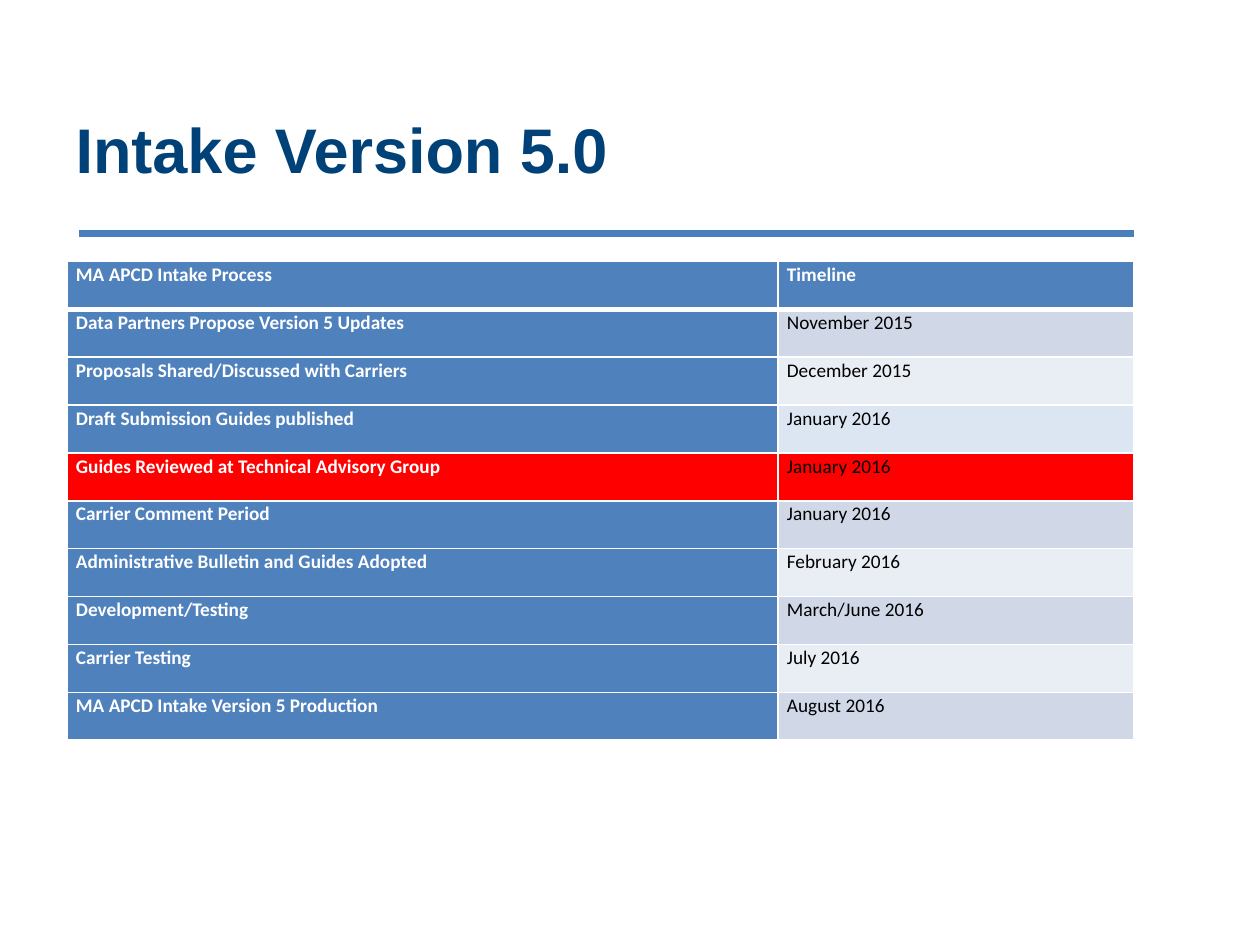
from lxml.etree import SubElement
from pptx import Presentation
from pptx.dml.color import RGBColor
from pptx.enum.shapes import MSO_CONNECTOR
from pptx.enum.text import MSO_ANCHOR, PP_ALIGN
from pptx.oxml.ns import qn
from pptx.util import Cm, Pt

BLUE, RED, WHITE, BLACK = "4F81BD", "FF0000", "FFFFFF", "000000"
BAND_DARK, BAND_LIGHT, BAND_PALE = "D0D8E8", "E9EDF4", "DCE6F2"

# Process step, timeline, fill of each column
ROWS = [
    ("MA APCD Intake Process", "Timeline", BLUE, BLUE),
    ("Data Partners Propose Version 5 Updates", "November 2015", BLUE, BAND_DARK),
    ("Proposals Shared/Discussed with Carriers", "December 2015", BLUE, BAND_LIGHT),
    ("Draft Submission Guides published", "January 2016", BLUE, BAND_PALE),
    ("Guides Reviewed at Technical Advisory Group", "January 2016", RED, RED),
    ("Carrier Comment Period", "January 2016", BLUE, BAND_DARK),
    ("Administrative Bulletin and Guides Adopted", "February 2016", BLUE, BAND_LIGHT),
    ("Development/Testing", "March/June 2016", BLUE, BAND_DARK),
    ("Carrier Testing", "July 2016", BLUE, BAND_LIGHT),
    ("MA APCD Intake Version 5 Production", "August 2016", BLUE, BAND_DARK),
]


def rgb(value):
    return RGBColor.from_string(value)


def apply(obj, values):
    for name, value in values.items():
        setattr(obj, name, value)


def format_font(font, color, **values):
    apply(font, values)
    font.color.rgb = rgb(color)


def add_title(s, text, left, top, width, height):
    title = s.shapes.title
    apply(title, dict(left=Cm(left), top=Cm(top), width=Cm(width), height=Cm(height)))
    tf = title.text_frame
    apply(tf, dict(text=text, vertical_anchor=MSO_ANCHOR.MIDDLE, word_wrap=True))
    p = tf.paragraphs[0]
    p.alignment = PP_ALIGN.LEFT
    format_font(p.runs[0].font, "004178", name="Arial", size=Pt(36), bold=True)


def add_rule(s, left, top, width):
    line = s.shapes.add_connector(
        MSO_CONNECTOR.STRAIGHT, Cm(left), Cm(top), Cm(left + width), Cm(top))
    line.line.width = Pt(4)
    line.line.color.rgb = rgb("4B7EBC")
    SubElement(line._element.spPr, qn("a:effectLst"))


def set_borders(cell, top, bottom):
    """Draw white borders; must run before the cell gets its fill."""
    tc_pr = cell._tc.get_or_add_tcPr()
    for side, width in dict(L=1, R=1, T=top, B=bottom).items():
        ln = SubElement(tc_pr, qn(f"a:ln{side}"), w=str(Pt(width)))
        fill = SubElement(ln, qn("a:solidFill"))
        SubElement(fill, qn("a:srgbClr"), val=WHITE)


def fill_cell(cell, text, fill, color, bold):
    apply(cell, dict(text=text, margin_left=Cm(0.18), margin_right=Cm(0.18),
                     margin_top=0, margin_bottom=0))
    cell.fill.solid()
    cell.fill.fore_color.rgb = rgb(fill)
    p = cell.text_frame.paragraphs[0]
    p.line_spacing = 1.07
    format_font(p.runs[0].font, color, name="Calibri", size=Pt(11), bold=bold)


def add_timeline(s, left, top, width, height):
    table = s.shapes.add_table(
        len(ROWS), 2, Cm(left), Cm(top), Cm(width), Cm(height)).table
    table.horz_banding = False
    table.columns[0].width = Cm(width * 2 / 3)
    table.columns[1].width = Cm(width / 3)
    for i, (step, date, step_fill, date_fill) in enumerate(ROWS):
        table.rows[i].height = Cm(height / len(ROWS))
        for j, (text, fill) in enumerate([(step, step_fill), (date, date_fill)]):
            cell = table.cell(i, j)
            heading = i == 0 or j == 0
            set_borders(cell, top=3 if i == 1 else 1, bottom=3 if i == 0 else 1)
            fill_cell(cell, text, fill, WHITE if heading else BLACK, heading)


def main():
    prs = Presentation()
    apply(prs, dict(slide_width=Cm(25.4), slide_height=Cm(19.05)))
    s = prs.slides.add_slide(prs.slide_layouts[5])
    add_rule(s, 1.6, 4.7, 21.26)
    add_title(s, "Intake Version 5.0", 1.27, 1.57, 21.59, 2.82)
    add_timeline(s, 1.35, 5.27, 21.5, 9.65)
    prs.save("out.pptx")


if __name__ == "__main__":
    main()
